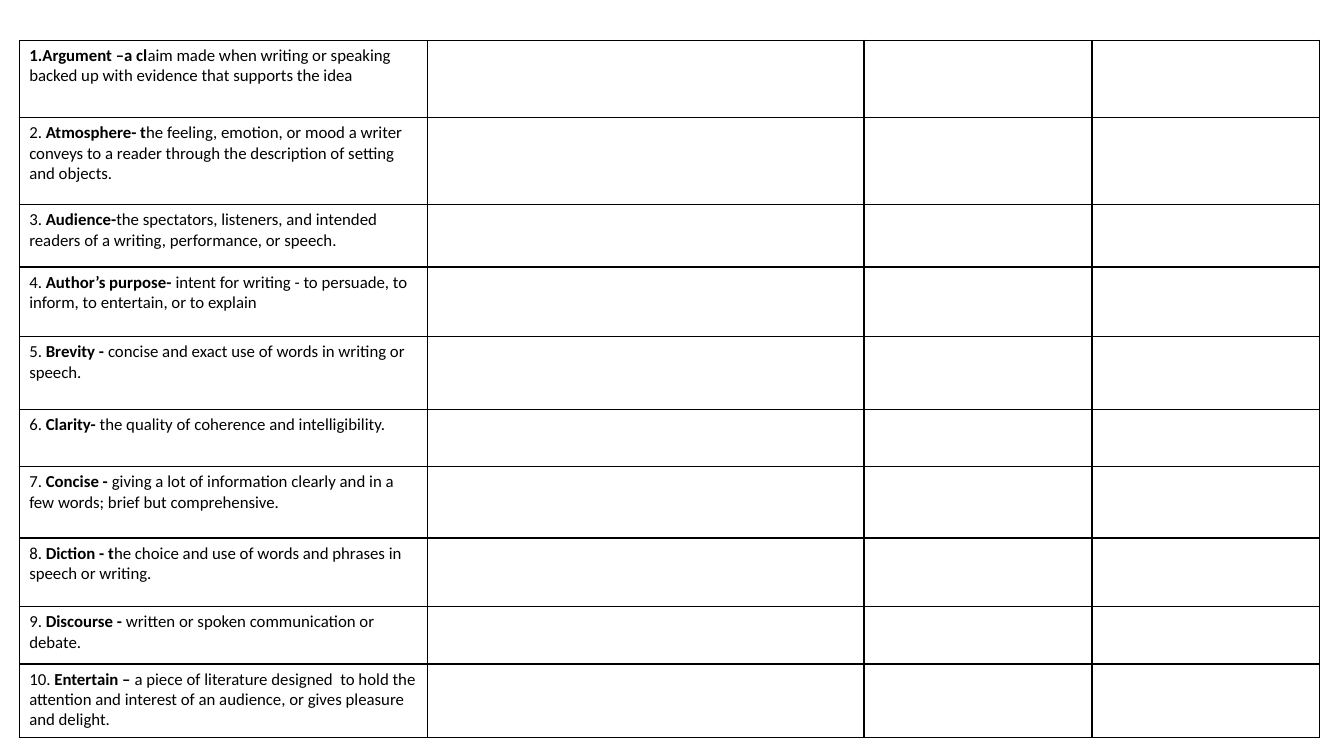
from dataclasses import dataclass

from lxml.etree import SubElement
from pptx import Presentation
from pptx.dml.color import RGBColor as Color
from pptx.oxml.ns import qn
from pptx.table import Table, _Cell as Cell
from pptx.util import Emu, Pt

EMU_PER_PX = 9144


@dataclass(frozen=True)
class Theme:
    ink: str = "000000"
    paper: str = "FFFFFF"
    font: str = "Calibri"
    text_size: int = 12
    rule_width: int = 1


@dataclass(frozen=True)
class Term:
    number: str
    word: str
    meaning: str
    height: int


THEME = Theme()
LEFT, TOP = 19, 40
COLUMN_WIDTHS = (405, 433, 226, 226)

TERMS = (
    Term("", "1.Argument –a cl",
         "aim made when writing or speaking backed up with evidence that supports the idea", 77),
    Term("2. ", "Atmosphere- t",
         "he feeling, emotion, or mood a writer conveys to a reader "
         "through the description of setting and objects.", 86),
    Term("3. ", "Audience-",
         "the spectators, listeners, and intended readers of a writing, performance, or speech.", 62),
    Term("4. ", "Author’s purpose- ",
         "intent for writing - to persuade, to inform, to entertain, or to explain", 69),
    Term("5. ", "Brevity - ", "concise and exact use of words in writing or speech.", 72),
    Term("6. ", "Clarity- ", "the quality of coherence and intelligibility.", 57),
    Term("7. ", "Concise - ",
         "giving a lot of information clearly and in a few words; brief but comprehensive.", 71),
    Term("8. ", "Diction - t",
         "he choice and use of words and phrases in speech or writing.", 68),
    Term("9. ", "Discourse - ", "written or spoken communication or debate.", 57),
    Term("10. ", "Entertain – ",
         "a piece of literature designed  to hold the attention and interest "
         "of an audience, or gives pleasure and delight.", 73),
)


def px(length: int) -> Emu:
    return Emu(length * EMU_PER_PX)


def style_cell(cell: Cell) -> None:
    properties = cell._tc.get_or_add_tcPr()
    for side in ("a:lnL", "a:lnR", "a:lnT", "a:lnB"):
        rule = SubElement(properties, qn(side), w=str(Pt(THEME.rule_width)))
        SubElement(SubElement(rule, qn("a:solidFill")), qn("a:srgbClr"), val=THEME.ink)
    cell.fill.solid()
    cell.fill.fore_color.rgb = Color.from_string(THEME.paper)


def write_term(cell: Cell, term: Term) -> None:
    definition = cell.text_frame.paragraphs[0]
    for text, bold in ((term.number, False), (term.word, True), (term.meaning, False)):
        if text:
            part = definition.add_run()
            part.text = text
            part.font.name = THEME.font
            part.font.size = Pt(THEME.text_size)
            part.font.bold = bold
            part.font.color.rgb = Color.from_string(THEME.ink)


def fill_glossary(glossary: Table) -> None:
    glossary.first_row = False
    glossary.horz_banding = False
    for column, width in zip(glossary.columns, COLUMN_WIDTHS):
        column.width = px(width)
    for row, term in zip(glossary.rows, TERMS):
        row.height = px(term.height)
        for cell in row.cells:
            style_cell(cell)
        write_term(row.cells[0], term)


def main() -> None:
    deck = Presentation()
    deck.slide_width, deck.slide_height = px(1333), px(750)
    slide = deck.slides.add_slide(deck.slide_layouts[6])
    frame = slide.shapes.add_table(
        len(TERMS), len(COLUMN_WIDTHS), px(LEFT), px(TOP),
        px(sum(COLUMN_WIDTHS)), px(sum(term.height for term in TERMS)))
    fill_glossary(frame.table)
    deck.save("out.pptx")


if __name__ == "__main__":
    main()
